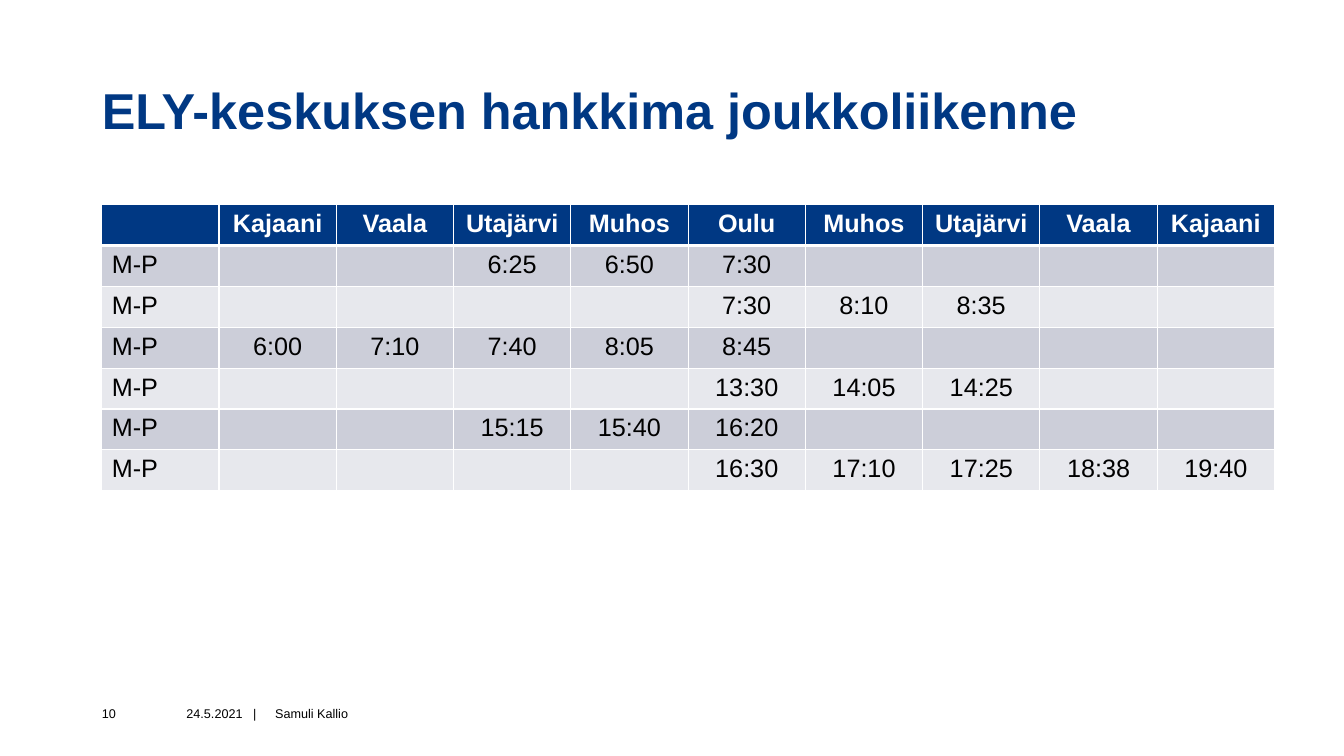
from dataclasses import dataclass

from lxml.etree import SubElement
from pptx import Presentation
from pptx.dml.color import RGBColor
from pptx.enum.text import MSO_ANCHOR, MSO_AUTO_SIZE, PP_ALIGN
from pptx.oxml import parse_xml
from pptx.oxml.ns import nsdecls, qn
from pptx.util import Inches, Pt


@dataclass(frozen=True)
class Theme:
    font: str = "Arial"
    blue: str = "003883"
    white: str = "FFFFFF"
    black: str = "000000"
    bands: tuple[str, str] = ("CCCED9", "E7E8ED")
    title_size: int = 36
    table_size: int = 18
    footer_size: int = 9


@dataclass(frozen=True)
class FooterItem:
    text: str
    left: float
    width: float
    indent: float = 0
    tab: float = 0


@dataclass(frozen=True)
class Trip:
    """Times of one bus, starting at the numbered stop column."""
    first_stop: int
    times: tuple[str, ...]


THEME = Theme()
LEFT, WIDTH = 1.01, 11.63
STOPS = ("Kajaani", "Vaala", "Utajärvi", "Muhos", "Oulu",
         "Muhos", "Utajärvi", "Vaala", "Kajaani")
DAYS = "M-P"
TRIPS = (
    Trip(3, ("6:25", "6:50", "7:30")),
    Trip(5, ("7:30", "8:10", "8:35")),
    Trip(1, ("6:00", "7:10", "7:40", "8:05", "8:45")),
    Trip(5, ("13:30", "14:05", "14:25")),
    Trip(3, ("15:15", "15:40", "16:20")),
    Trip(5, ("16:30", "17:10", "17:25", "18:38", "19:40")),
)
FOOTER = (
    FooterItem("10", LEFT, 0.53),
    FooterItem("24.5.2021\t|", 1.59, 1.07, indent=0.26, tab=0.66),
    FooterItem("Samuli Kallio", 2.73, 4.5),
)


def write(p, text: str, *, size: int, color: str, bold: bool = False,
          align: PP_ALIGN = PP_ALIGN.LEFT) -> None:
    p.alignment = align
    r = p.add_run()
    r.text = text
    r.font.name = THEME.font
    r.font.size = Pt(size)
    r.font.bold = bold
    r.font.color.rgb = RGBColor.from_string(color)


def prepare_frame(tf, indent: float = 0) -> None:
    tf.word_wrap = True
    tf.auto_size = MSO_AUTO_SIZE.NONE
    tf.vertical_anchor = MSO_ANCHOR.MIDDLE
    tf.margin_left = Inches(indent)
    tf.margin_top = tf.margin_right = tf.margin_bottom = 0


def add_title(s, text: str) -> None:
    title = s.shapes.title
    title.left, title.top = Inches(LEFT), Inches(0.51)
    title.width, title.height = Inches(WIDTH), Inches(1.22)
    prepare_frame(title.text_frame)
    p = title.text_frame.paragraphs[0]
    p.line_spacing = 0.9
    write(p, text, size=THEME.title_size, color=THEME.blue, bold=True)


def set_borders(cell, bottom: float) -> None:
    tcPr = cell._tc.get_or_add_tcPr()
    widths = {"lnL": 1, "lnR": 1, "lnT": 1, "lnB": bottom}
    for i, (tag, width) in enumerate(widths.items()):
        tcPr.insert(i, parse_xml(
            f'<a:{tag} {nsdecls("a")} w="{Pt(width)}"><a:solidFill>'
            f'<a:srgbClr val="{THEME.white}"/></a:solidFill></a:{tag}>'))


def add_timetable(s) -> None:
    rows = [("", *STOPS)]
    for trip in TRIPS:
        before = ("",) * (trip.first_stop - 1)
        after = ("",) * (len(STOPS) - len(before) - len(trip.times))
        rows.append((DAYS, *before, *trip.times, *after))
    table = s.shapes.add_table(len(rows), len(rows[0]), Inches(LEFT), Inches(2.03),
                               Inches(WIDTH), Inches(2.84)).table
    for i, row in enumerate(rows):
        header = i == 0
        fill = THEME.blue if header else THEME.bands[(i - 1) % 2]
        for j, text in enumerate(row):
            cell = table.cell(i, j)
            cell.fill.solid()
            cell.fill.fore_color.rgb = RGBColor.from_string(fill)
            set_borders(cell, bottom=3 if header else 1)
            if text:
                write(cell.text_frame.paragraphs[0], text, size=THEME.table_size,
                      color=THEME.white if header else THEME.black, bold=header,
                      align=PP_ALIGN.CENTER if j else PP_ALIGN.LEFT)


def add_footer_item(s, item: FooterItem) -> None:
    tf = s.shapes.add_textbox(Inches(item.left), Inches(6.97),
                              Inches(item.width), Inches(0.22)).text_frame
    prepare_frame(tf, item.indent)
    p = tf.paragraphs[0]
    if item.tab:
        tabs = SubElement(p._p.get_or_add_pPr(), qn("a:tabLst"))
        SubElement(tabs, qn("a:tab"), pos=str(Inches(item.tab)), algn="l")
    write(p, item.text, size=THEME.footer_size, color=THEME.black)


def main() -> None:
    prs = Presentation()
    prs.slide_width, prs.slide_height = Inches(13.33), Inches(7.5)
    s = prs.slides.add_slide(prs.slide_layouts[5])
    add_title(s, "ELY-keskuksen hankkima joukkoliikenne")
    add_timetable(s)
    for item in FOOTER:
        add_footer_item(s, item)
    prs.save("out.pptx")


if __name__ == "__main__":
    main()
